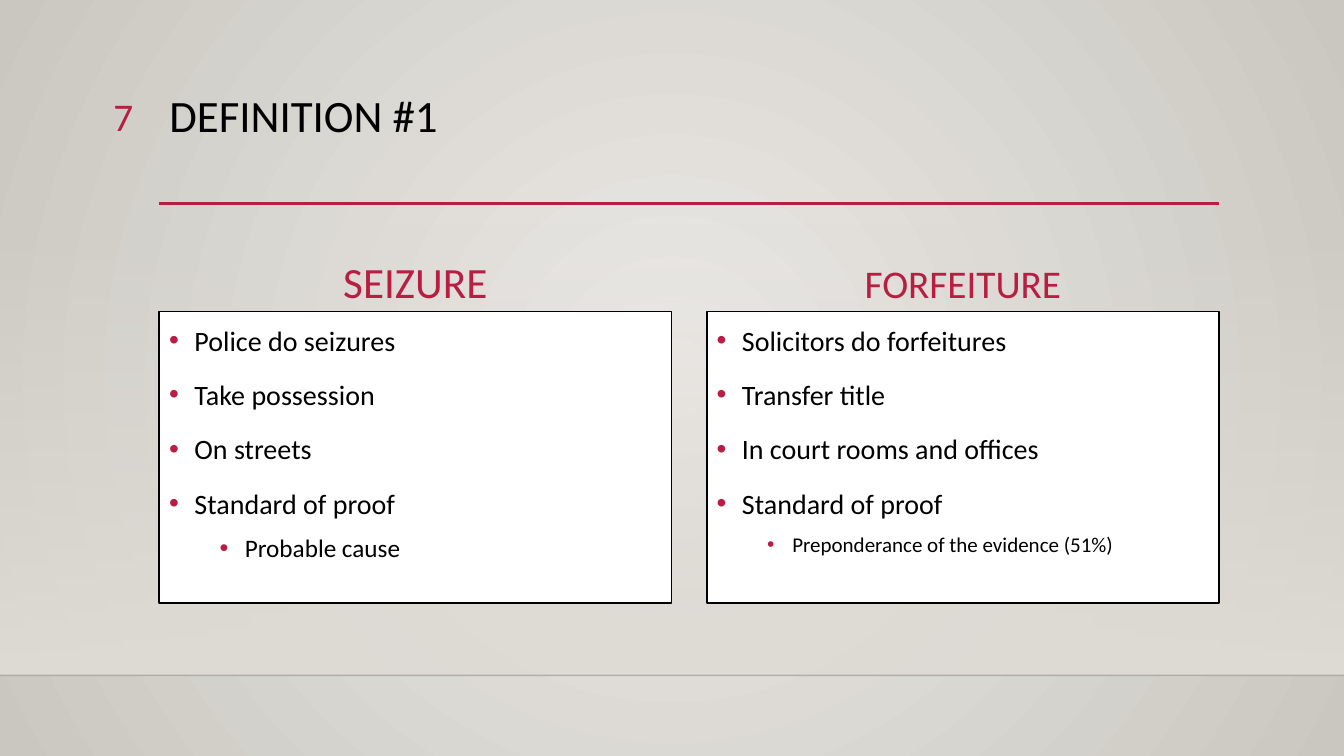
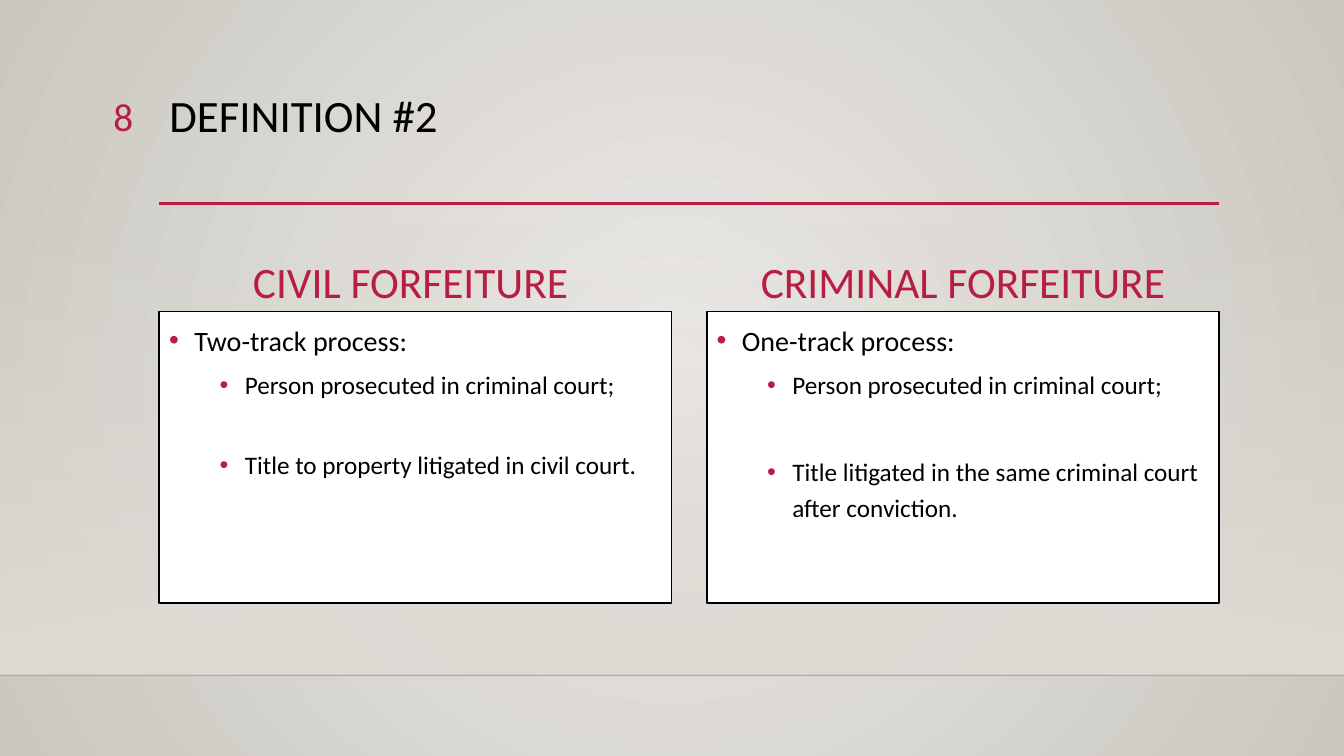
from lxml import etree
from pptx import Presentation
from pptx.dml.color import RGBColor
from pptx.enum.shapes import MSO_CONNECTOR as CONN, MSO_SHAPE as SHAPE
from pptx.enum.text import MSO_ANCHOR as ANCHOR, MSO_AUTO_SIZE as FIT, PP_ALIGN as ALIGN
from pptx.oxml.ns import qn
from pptx.util import Inches, Pt

WIDTH, HEIGHT = 13.33, 7.5
LEFT, COL_W, GAP = 1.58, 5.08, 0.35
RIGHT = LEFT + 2 * COL_W + GAP
RULE_Y, HEAD_Y, BOX_Y, FLOOR_Y = 2.02, 2.21, 3.09, 6.7
BOX_H = 2.89
FONT = "Calibri"
ACCENT, BLACK, WHITE, SAND = "B71E42", "000000", "FFFFFF", "DFDBD5"

LEVELS = [
    {"indent": 0.25, "size": 20, "before": 10},
    {"indent": 0.75, "size": 18, "before": 5},
]

SLIDES = [
    {
        "number": "7",
        "title": "DEFINITION #1",
        "columns": [
            ("SEIZURE", 30.8, [
                ("Police do seizures", 0, {}),
                ("Take possession", 0, {}),
                ("On streets", 0, {}),
                ("Standard of proof", 0, {}),
                ("Probable cause", 1, {}),
            ]),
            ("FORFEITURE", 28, [
                ("Solicitors do forfeitures", 0, {}),
                ("Transfer title", 0, {}),
                ("In court rooms and offices", 0, {}),
                ("Standard of proof", 0, {}),
                ("Preponderance of the evidence (51%)", 1, {"size": 15}),
            ]),
        ],
    },
    {
        "number": "8",
        "title": "DEFINITION #2",
        "columns": [
            ("CIVIL FORFEITURE ", 31, [
                ("Two-track process:", 0, {}),
                ("Person prosecuted in criminal court;", 1, {}),
                ("Title to property litigated in civil court.", 1, {"before": 31}),
            ]),
            ("CRIMINAL FORFEITURE", 31, [
                ("One-track process:", 0, {}),
                ("Person prosecuted in criminal court;", 1, {}),
                ("Title litigated in the same criminal court after conviction.", 1,
                 {"before": 36}),
            ]),
        ],
    },
]


def rgb(value):
    return RGBColor.from_string(value)


def apply(target, values):
    for name, value in values.items():
        setattr(target, name, value)


def place(left, top, width, height):
    return [Inches(v) for v in (left, top, width, height)]


def add_child(parent, tag, **attributes):
    return etree.SubElement(parent, qn(tag), attributes)


def set_alpha(color_parent, percent):
    color = color_parent.find(".//" + qn("a:srgbClr"))
    add_child(color, "a:alpha", val=str(percent * 1000))


def color_stops(fill, colors):
    fill.gradient()
    for stop, color in zip(fill.gradient_stops, colors):
        stop.color.rgb = rgb(color)


def set_background(master):
    color_stops(master.background.fill, ["ECEAE7", "CAC7C1"])
    gradient = master.element.find(".//" + qn("a:gradFill"))
    gradient.remove(gradient.find(qn("a:lin")))
    circle = add_child(gradient, "a:path", path="circle")
    add_child(circle, "a:fillToRect", l="50000", t="50000", r="50000", b="50000")


def add_rule(s, left, right, y, color, weight, alpha=None):
    rule = s.shapes.add_connector(
        CONN.STRAIGHT, Inches(left), Inches(y), Inches(right), Inches(y))
    rule.line.color.rgb = rgb(color)
    rule.line.width = Pt(weight)
    sp_pr = rule.element.spPr
    add_child(sp_pr, "a:effectLst")
    if alpha is not None:
        set_alpha(sp_pr, alpha)


def add_backdrop(s):
    band = s.shapes.add_shape(
        SHAPE.RECTANGLE, *place(0, HEAD_Y, WIDTH, FLOOR_Y - HEAD_Y))
    band.shadow.inherit = False
    band.line.fill.background()
    color_stops(band.fill, [SAND, SAND])
    band.fill.gradient_angle = 270
    set_alpha(band.element.spPr, 0)
    add_rule(s, 0, WIDTH, FLOOR_Y, "000001", 1, alpha=20)
    add_rule(s, LEFT, RIGHT, RULE_Y, ACCENT, 2.5)


def write(p, text, size, color, **values):
    apply(p, values)
    r = p.add_run()
    r.text = text
    apply(r.font, {"name": FONT, "size": Pt(size)})
    r.font.color.rgb = rgb(color)


def frame(shape, anchor=ANCHOR.TOP):
    tf = shape.text_frame
    apply(tf, {"word_wrap": True, "auto_size": FIT.NONE, "vertical_anchor": anchor})
    return tf


def add_title(s, text):
    title = s.shapes.title
    left, top, width, height = place(LEFT, 0.88, RIGHT - LEFT, 1.16)
    apply(title, {"left": left, "top": top, "width": width, "height": height})
    write(frame(title).paragraphs[0], text, 32, BLACK,
          alignment=ALIGN.LEFT, line_spacing=0.9)


def add_label(s, box, text, size, anchor=ANCHOR.TOP, **values):
    tf = frame(s.shapes.add_textbox(*place(*box)), anchor)
    write(tf.paragraphs[0], text, size, ACCENT, **values)


def add_bullet(p, indent):
    p_pr = p._p.get_or_add_pPr()
    apply_indent = {"marL": indent, "indent": -0.25}
    for name, value in apply_indent.items():
        p_pr.set(name, str(Inches(value)))
    add_child(add_child(p_pr, "a:buClr"), "a:srgbClr", val=ACCENT)
    add_child(p_pr, "a:buFont", typeface="Arial")
    add_child(p_pr, "a:buChar", char="•")


def add_list_box(s, left, items):
    box = s.shapes.add_shape(SHAPE.RECTANGLE, *place(left, BOX_Y, COL_W, BOX_H))
    box.shadow.inherit = False
    box.fill.solid()
    box.fill.fore_color.rgb = rgb(WHITE)
    box.line.color.rgb = rgb(BLACK)
    box.line.width = Pt(1.25)
    tf = frame(box)
    for i, (text, level, changes) in enumerate(items):
        style = {**LEVELS[level], **changes}
        p = tf.add_paragraph() if i else tf.paragraphs[0]
        add_bullet(p, style["indent"])
        write(p, text, style["size"], BLACK, level=level, alignment=ALIGN.LEFT,
              line_spacing=1.2, space_before=Pt(style["before"] if i else 0))


def add_column(s, index, heading, size, items):
    left = LEFT + index * (COL_W + GAP)
    add_label(s, (left, HEAD_Y, COL_W, BOX_Y - HEAD_Y), heading, size,
              ANCHOR.BOTTOM, alignment=ALIGN.CENTER, line_spacing=0.8)
    add_list_box(s, left, items)


def add_definition(prs, content):
    s = prs.slides.add_slide(prs.slide_layouts[5])
    add_backdrop(s)
    add_title(s, content["title"])
    for index, column in enumerate(content["columns"]):
        add_column(s, index, *column)
    add_label(s, (0.53, 0.87, 0.89, 0.55), content["number"], 28,
              alignment=ALIGN.RIGHT)


def main():
    prs = Presentation()
    apply(prs, {"slide_width": Inches(WIDTH), "slide_height": Inches(HEIGHT)})
    set_background(prs.slide_master)
    for content in SLIDES:
        add_definition(prs, content)
    prs.save("out.pptx")


if __name__ == "__main__":
    main()
